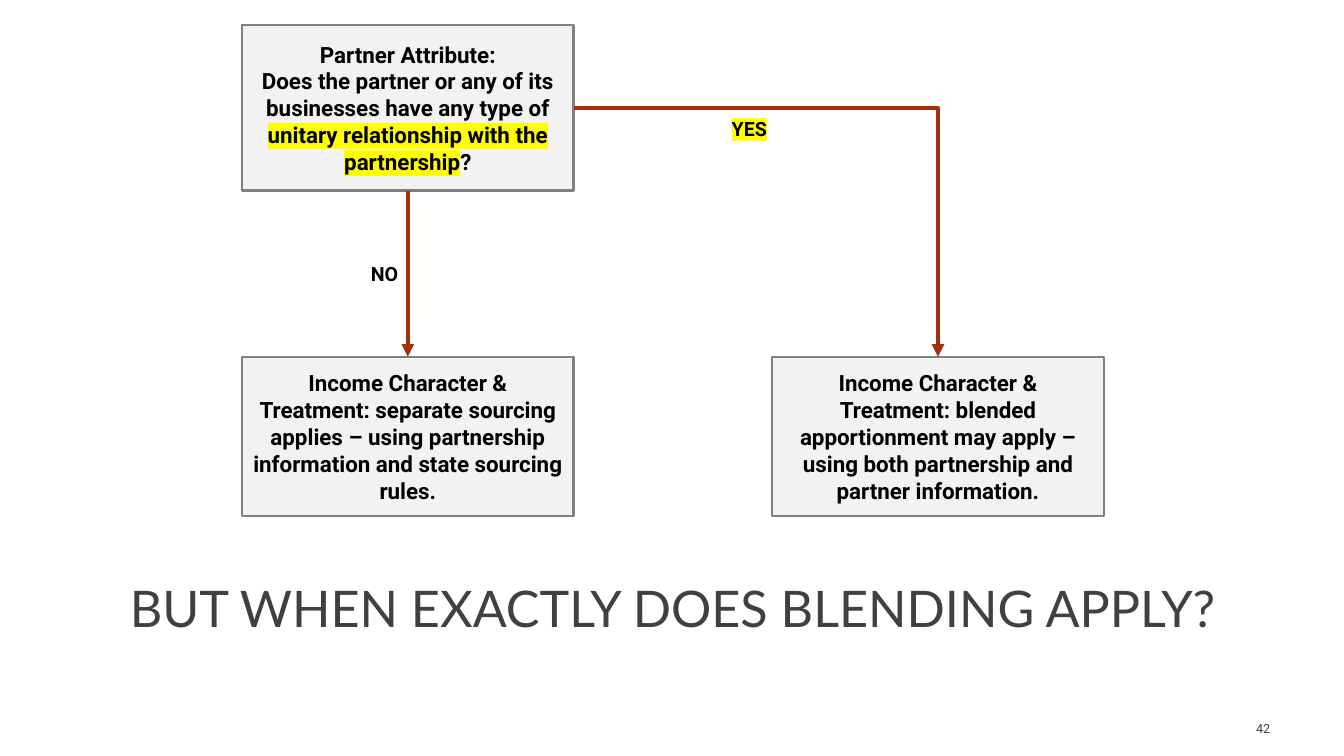
"""Build the partnership blending decision slide."""
import lxml.etree
import pptx
import pptx.dml.color
import pptx.enum.shapes
import pptx.enum.text
import pptx.oxml.ns
import pptx.util

Pt = pptx.util.Pt
ALIGN = pptx.enum.text.PP_ALIGN
ANCHOR = pptx.enum.text.MSO_ANCHOR
CONNECTOR = pptx.enum.shapes.MSO_CONNECTOR

THEME = {
    "box": "F2F2F2", "border": "808080", "arrow": "A5300F", "ink": "000000",
    "soft": "404040", "highlight": "FFFF00", "font": "Roboto", "title_font": "Lato",
    "box_size": 16, "label_size": 14, "title_size": 36, "number_size": 9,
    "border_width": 1.75, "arrow_width": 3,
}

QUESTION = [
    [("Partner Attribute:", False)],
    [("Does the partner or any of its businesses have any type of ", False),
     ("unitary relationship with the partnership", True), ("?", False)],
]
SEPARATE = [[("Income Character & Treatment: separate sourcing applies – using "
              "partnership information and state sourcing rules.", False)]]
BLENDED = [[("Income Character & Treatment: blended apportionment may apply – using "
             "both partnership and partner information.", False)]]
NO = [[("NO", False)]]
YES = [[("YES", True)]]
TITLE = [[("BUT WHEN EXACTLY DOES BLENDING APPLY?", False)]]
NUMBER = [[("42", False)]]

LEFT_COLUMN, RIGHT_COLUMN = 172.8, 551.5
QUESTION_TOP, OUTCOME_TOP = 18, 254.9
BOX_WIDTH, QUESTION_HEIGHT, OUTCOME_HEIGHT = 237, 118.1, 113.8


def rgb(key):
    return pptx.dml.color.RGBColor.from_string(THEME[key])


def add_element(parent, tag, **attributes):
    return lxml.etree.SubElement(parent, pptx.oxml.ns.qn(tag), attributes)


def write(shape, lines, size, ink="ink", font="font", bold=False,
          align=ALIGN.CENTER, anchor=ANCHOR.MIDDLE):
    frame = shape.text_frame
    frame.word_wrap = True
    frame.vertical_anchor = anchor
    paragraph = frame.paragraphs[0]
    paragraph.alignment = align
    for index, line in enumerate(lines):
        if index:
            paragraph.add_line_break()
        for words, highlighted in line:
            run = paragraph.add_run()
            run.text = words
            run.font.size = Pt(THEME[size])
            run.font.bold = bold
            run.font.color.rgb = rgb(ink)
            if highlighted:
                marker = add_element(run.font._element, "a:highlight")
                add_element(marker, "a:srgbClr", val=THEME["highlight"])
            run.font.name = THEME[font]


def add_box(slide, lines, left, top, height):
    box = slide.shapes.add_shape(pptx.enum.shapes.MSO_SHAPE.RECTANGLE,
                                 Pt(left), Pt(top), Pt(BOX_WIDTH), Pt(height))
    box.shadow.inherit = False
    box.fill.solid()
    box.fill.fore_color.rgb = rgb("box")
    box.line.color.rgb = rgb("border")
    box.line.width = Pt(THEME["border_width"])
    write(box, lines, "box_size", bold=True)
    return box


def add_text(slide, lines, left, top, width, height, size, **style):
    box = slide.shapes.add_textbox(Pt(left), Pt(top), Pt(width), Pt(height))
    write(box, lines, size, **style)


def add_arrow(slide, kind, source, side, target):
    arrow = slide.shapes.add_connector(kind, 0, 0, 0, 0)
    arrow.begin_connect(source, side)
    arrow.end_connect(target, 0)
    arrow.line.color.rgb = rgb("arrow")
    arrow.line.width = Pt(THEME["arrow_width"])
    add_element(arrow.line._get_or_add_ln(), "a:tailEnd", type="triangle")
    add_element(arrow._element.spPr, "a:effectLst")
    return arrow


def main():
    deck = pptx.Presentation()
    deck.slide_width, deck.slide_height = Pt(960), Pt(540)
    slide = deck.slides.add_slide(deck.slide_layouts[6])

    blended = add_box(slide, BLENDED, RIGHT_COLUMN, OUTCOME_TOP, OUTCOME_HEIGHT)
    separate = add_box(slide, SEPARATE, LEFT_COLUMN, OUTCOME_TOP, OUTCOME_HEIGHT)
    question = add_box(slide, QUESTION, LEFT_COLUMN, QUESTION_TOP, QUESTION_HEIGHT)

    add_arrow(slide, CONNECTOR.STRAIGHT, question, 2, separate)
    yes_arrow = add_arrow(slide, CONNECTOR.ELBOW, question, 3, blended)
    yes_arrow._element.spPr.find(pptx.oxml.ns.qn("a:prstGeom")).set("prst", "bentConnector2")

    label = {"size": "label_size", "bold": True, "align": ALIGN.LEFT, "anchor": ANCHOR.TOP}
    add_text(slide, NO, 257.8, 183.6, 36.7, 24.5, **label)
    add_text(slide, YES, 515.6, 80, 45.4, 24.5, **label)
    add_text(slide, TITLE, 46.8, 407.5, 867.6, 51.1, "title_size", ink="soft",
             font="title_font", anchor=ANCHOR.BOTTOM)
    add_text(slide, NUMBER, 831.6, 506.2, 82.8, 28.8, "number_size", ink="soft",
             align=ALIGN.RIGHT)
    deck.save("out.pptx")


if __name__ == "__main__":
    main()
